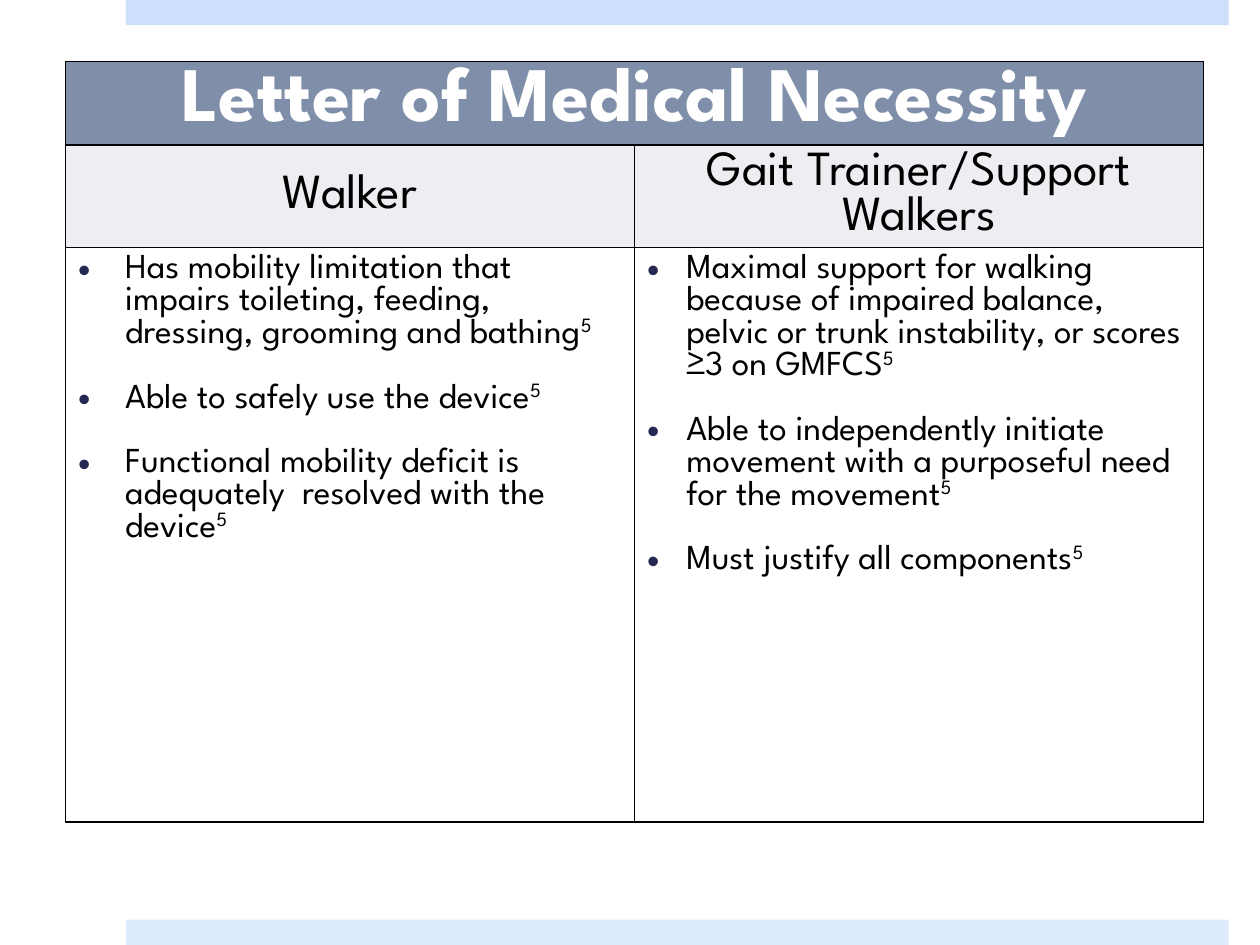
from lxml import etree
from pptx import Presentation
from pptx.dml.color import RGBColor
from pptx.enum.shapes import MSO_SHAPE
from pptx.enum.text import MSO_ANCHOR, PP_ALIGN
from pptx.oxml.ns import qn
from pptx.util import Cm, Pt

RECT = MSO_SHAPE.RECTANGLE
MIDDLE, TOP = MSO_ANCHOR.MIDDLE, MSO_ANCHOR.TOP
CENTER, LEFT = PP_ALIGN.CENTER, PP_ALIGN.LEFT

# Content
TITLE = "Letter of Medical Necessity"
NOTE = "5"
COLUMNS = [
    {"head": "Walker", "indent": 0.95, "points": [
        "Has mobility limitation that impairs toileting, feeding, "
        "dressing, grooming and bathing",
        "Able to safely use the device",
        "Functional mobility deficit is adequately  resolved with the device",
    ]},
    {"head": "Gait Trainer/Support Walkers", "indent": 0.79, "points": [
        "Maximal support for walking because of impaired balance, "
        "pelvic or trunk instability, or scores ≥3 on GMFCS",
        "Able to independently initiate movement with a purposeful need "
        "for the movement",
        "Must justify all components",
    ]},
]
COLORS = {"top": "CDE0FB", "base": "DEEAFD", "title": "7F8FA9",
          "head": "ECEEF1", "body": "FFFFFF", "white": "FFFFFF",
          "text": "000000", "line": "000000", "bullet": "242852"}
FONT = "League Spartan"
WIDTH, HEIGHT, BAR = 25.4, 19.05, 0.51
ROWS = [1.3, 1.3, 11.58]
COL = 11.47


def rgb(name):
    return RGBColor.from_string(COLORS[name])


def add_color(parent, name):
    etree.SubElement(parent, qn("a:srgbClr"), val=COLORS[name])


def style_run(run, size, color="text", bold=False):
    font = run.font
    font.name, font.size, font.bold = FONT, Pt(size), bold
    font.color.rgb = rgb(color)


def style_cell(cell, fill, anchor=TOP):
    props = cell._tc.get_or_add_tcPr()
    for side in ("lnL", "lnR", "lnT", "lnB"):
        line = etree.SubElement(props, qn("a:" + side), w=str(Pt(1)))
        add_color(etree.SubElement(line, qn("a:solidFill")), "line")
    cell.fill.solid()
    cell.fill.fore_color.rgb = rgb(fill)
    cell.vertical_anchor = anchor


def set_head(cell, text, size, color="text", bold=False):
    para = cell.text_frame.paragraphs[0]
    para.text = text
    para.alignment = CENTER
    style_run(para.runs[0], size, color, bold)


def add_bullet(para, indent):
    props = para._p.get_or_add_pPr()
    props.set("marL", str(Cm(indent)))
    props.set("indent", str(-Cm(indent)))
    add_color(etree.SubElement(props, qn("a:buClr")), "bullet")
    etree.SubElement(props, qn("a:buFont"), typeface="Arial")
    etree.SubElement(props, qn("a:buChar"), char="•")


def set_points(cell, points, indent):
    frame = cell.text_frame
    frame.text = "\n".join(points)
    for para in frame.paragraphs:
        para.alignment = LEFT
        if para.text != points[-1]:
            para.space_after = Pt(18.4)
        add_bullet(para, indent)
        note = para.add_run()
        note.text = NOTE
        for run in para.runs:
            style_run(run, 20)
        note.font._element.set("baseline", "30000")


deck = Presentation()
deck.slide_width, deck.slide_height = Cm(WIDTH), Cm(HEIGHT)
slide = deck.slides.add_slide(deck.slide_layouts[6])

# Bars along the top and bottom edges
for top, color in ((0, "top"), (HEIGHT - BAR, "base")):
    bar = slide.shapes.add_shape(RECT, Cm(2.54), Cm(top), Cm(22.23), Cm(BAR))
    bar.shadow.inherit = False
    bar.fill.solid()
    bar.fill.fore_color.rgb = rgb(color)
    bar.line.fill.background()

# Table frame
table = slide.shapes.add_table(len(ROWS), len(COLUMNS), Cm(1.32), Cm(1.24),
                               Cm(COL * len(COLUMNS)), Cm(sum(ROWS))).table
for row, height in zip(table.rows, ROWS):
    row.height = Cm(height)

# Title row
table.cell(0, 0).merge(table.cell(0, len(COLUMNS) - 1))
set_head(table.cell(0, 0), TITLE, 44, "white", True)

# One column per device
for i, column in enumerate(COLUMNS):
    table.columns[i].width = Cm(COL)
    title, head, body = (table.cell(r, i) for r in range(len(ROWS)))
    style_cell(title, "title")
    style_cell(head, "head", MIDDLE)
    style_cell(body, "body")
    set_head(head, column["head"], 28)
    set_points(body, column["points"], column["indent"])

deck.save("out.pptx")
